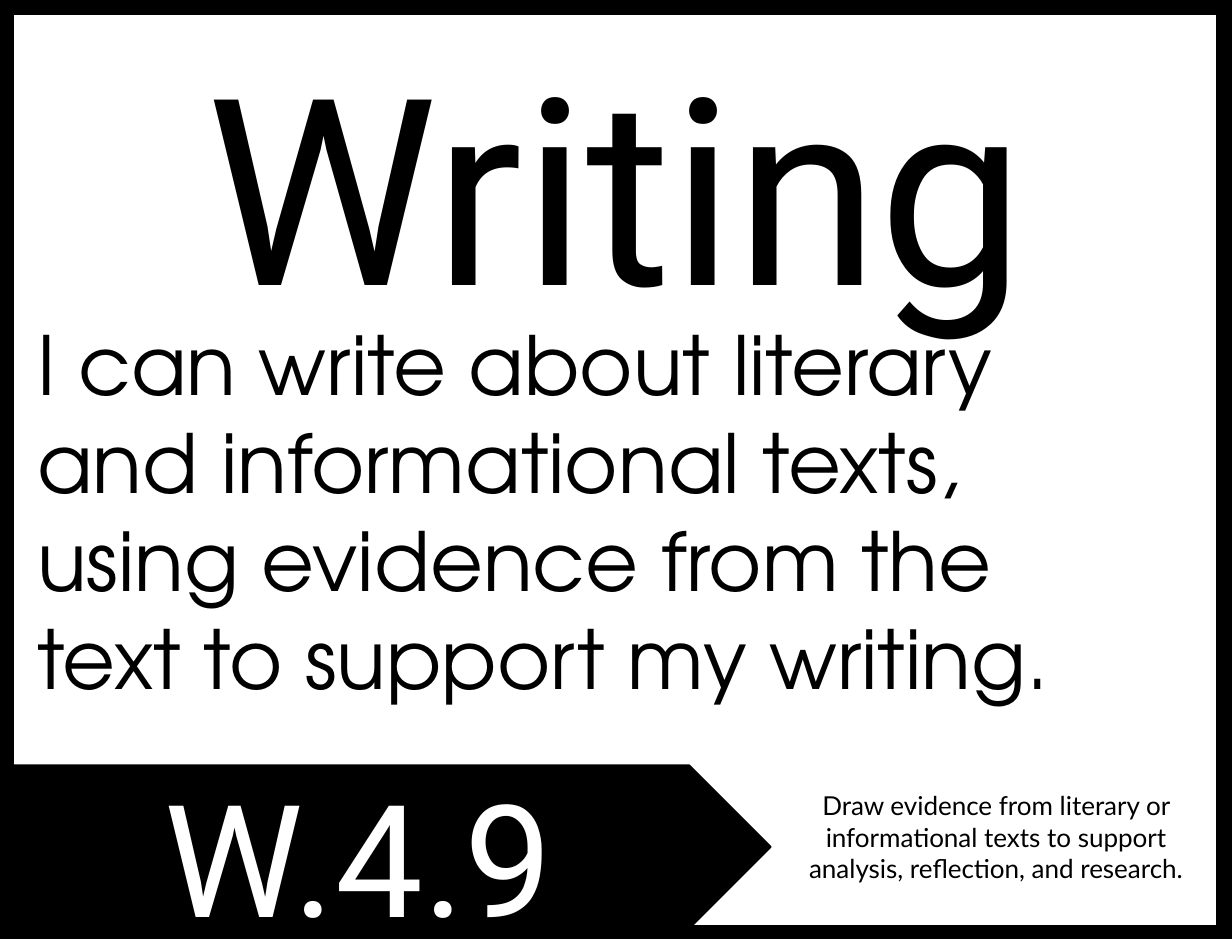
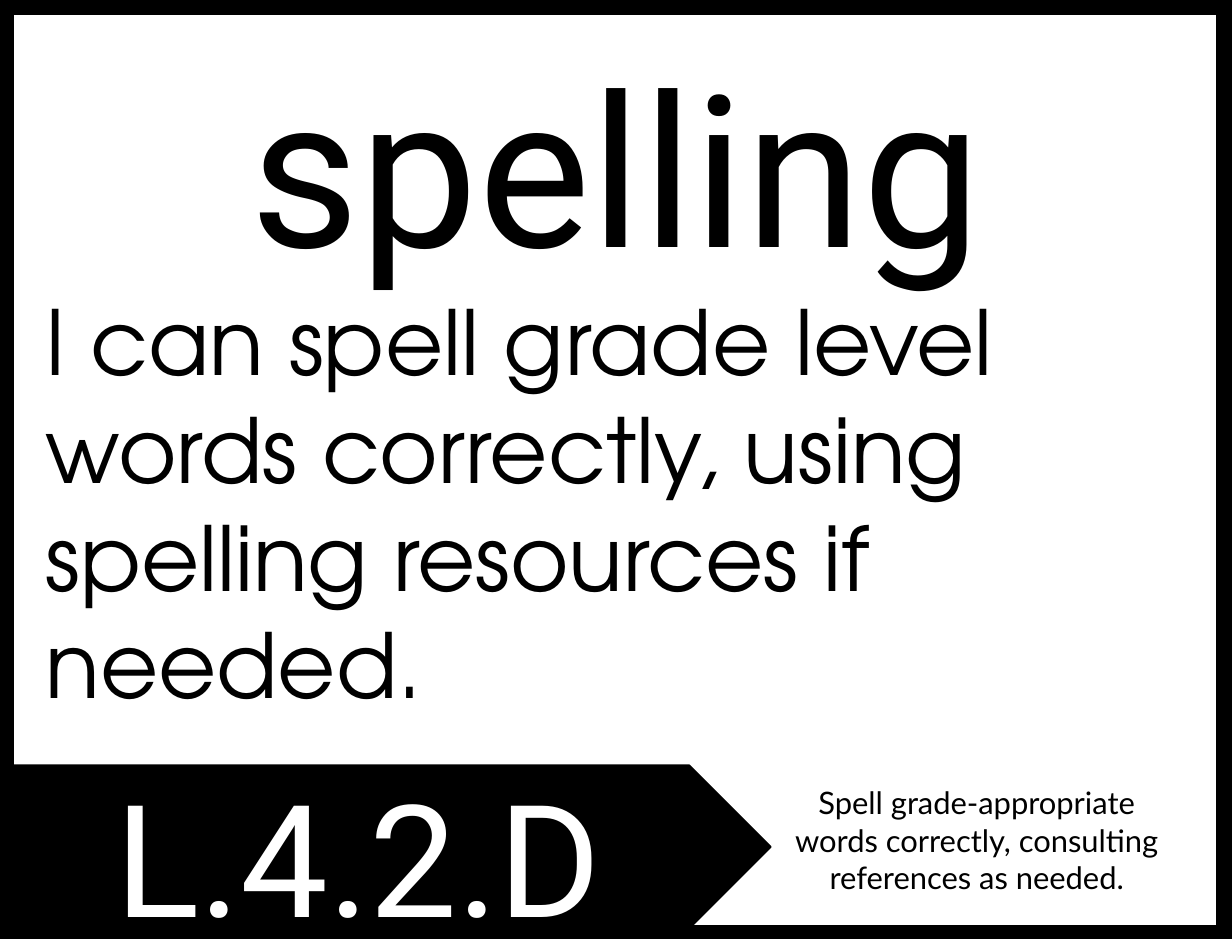
from pptx import Presentation
from pptx.dml.color import RGBColor
from pptx.enum.shapes import MSO_SHAPE
from pptx.enum.text import MSO_AUTO_SIZE, PP_ALIGN
from pptx.util import Pt

EMU_PER_PX = 9144  # 100 px to the inch
SLIDE_WIDTH, SLIDE_HEIGHT = 1050, 800

BLACK = RGBColor(0x00, 0x00, 0x00)
WHITE = RGBColor(0xFF, 0xFF, 0xFF)

HEADING_FONT = "Roboto"
GOAL_FONT = "TeX Gyre Adventor"
STANDARD_FONT = "Lato"

# Boxes are left, top, width, height in px
PANEL_BOX = (8, 9, 1033, 783)
ARROW_BOX = (8, 652, 649, 139)
CODE_BOX = (49, 643, 513, 172)

# Each part is text, box, text size in points
POSTERS = [
    {
        "code": "W.4.9",
        "standard": ("Draw evidence from literary or informational texts to support "
                     "analysis, reflection, and research.", (667, 668, 364, 118), 16),
        "title": ("Writing", (0, 16, 1050, 279), 160),
        "goal": ("I can write about literary and informational texts, using evidence "
                 "from the text to support my writing.", (22, 263, 930, 347), 50),
    },
    {
        "code": "L.4.2.D",
        "standard": ("Spell grade-appropriate words correctly, consulting references "
                     "as needed.", (666, 663, 333, 106), 19),
        "title": ("spelling", (0, 25, 1050, 229), 130),
        "goal": ("I can spell grade level words correctly, using spelling resources "
                 "if needed.", (29, 239, 929, 380), 55),
    },
]


def to_emu(box):
    return [length * EMU_PER_PX for length in box]


def add_block(slide, preset, box, fill, line_width):
    shape = slide.shapes.add_shape(preset, *to_emu(box))
    shape.shadow.inherit = False
    shape.fill.solid()
    shape.fill.fore_color.rgb = fill
    shape.line.color.rgb = BLACK
    shape.line.width = Pt(line_width)


def add_text(slide, text, box, size, font, color=BLACK, align=PP_ALIGN.CENTER):
    frame = slide.shapes.add_textbox(*to_emu(box)).text_frame
    frame.word_wrap = True
    frame.auto_size = MSO_AUTO_SIZE.SHAPE_TO_FIT_TEXT
    paragraph = frame.paragraphs[0]
    paragraph.alignment = align
    run = paragraph.add_run()
    run.text = text
    run.font.name = font
    run.font.size = Pt(size)
    run.font.color.rgb = color


def add_poster(presentation, poster):
    slide = presentation.slides.add_slide(presentation.slide_layouts[6])
    slide.background.fill.solid()
    slide.background.fill.fore_color.rgb = BLACK
    add_block(slide, MSO_SHAPE.RECTANGLE, PANEL_BOX, WHITE, 6)
    add_block(slide, MSO_SHAPE.PENTAGON, ARROW_BOX, BLACK, 1)
    add_text(slide, poster["code"], CODE_BOX, 96, font=HEADING_FONT, color=WHITE)
    add_text(slide, *poster["standard"], font=STANDARD_FONT)
    add_text(slide, *poster["title"], font=HEADING_FONT)
    add_text(slide, *poster["goal"], font=GOAL_FONT, align=PP_ALIGN.LEFT)


def main():
    presentation = Presentation()
    presentation.slide_width, presentation.slide_height = to_emu((SLIDE_WIDTH, SLIDE_HEIGHT))
    for poster in POSTERS:
        add_poster(presentation, poster)
    presentation.save("out.pptx")


if __name__ == "__main__":
    main()
